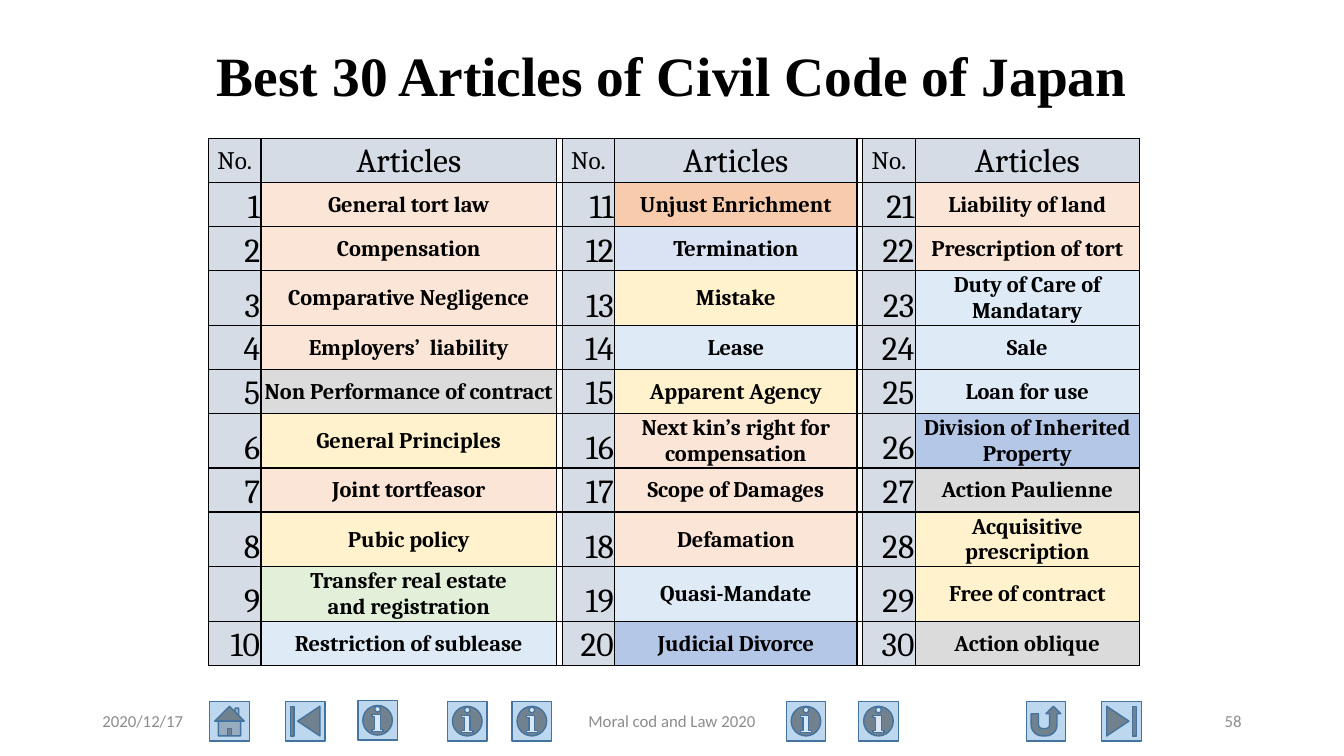
from copy import deepcopy
from lxml.etree import SubElement
from pptx import Presentation
from pptx.dml.color import RGBColor
from pptx.enum.shapes import MSO_SHAPE
from pptx.enum.text import MSO_ANCHOR, PP_ALIGN
from pptx.oxml.ns import qn
from pptx.util import Pt

theme = {
    "color": {
        "text": "000000", "footer": "8C8C8C", "border": "000000",
        "button": "BDD7EE", "button_line": "43739E", "label": "D6DCE5",
        "tort": "FBE5D6", "enrichment": "F8CBAD", "termination": "DAE3F3",
        "general": "FFF2CC", "contract": "DEEBF7", "obligation": "DBDBDB",
        "property": "E2F0D9", "family": "B4C7E7",
    },
    "font": {
        "title": {"name": "Times New Roman", "size": Pt(39.6), "bold": True},
        "footer": {"name": "Calibri", "size": Pt(12), "bold": False},
        "no": {"name": "Cambria", "size": Pt(18), "bold": False},
        "large": {"name": "Cambria", "size": Pt(24), "bold": False},
        "article": {"name": "Cambria", "size": Pt(16), "bold": True},
    },
}

ARTICLES = [
    ("General tort law", "tort"),
    ("Compensation", "tort"),
    ("Comparative Negligence", "tort"),
    ("Employers’  liability", "tort"),
    ("Non Performance of contract", "obligation"),
    ("General Principles", "general"),
    ("Joint tortfeasor", "tort"),
    ("Pubic policy", "general"),
    ("Transfer real estate\nand registration", "property"),
    ("Restriction of sublease", "contract"),
    ("Unjust Enrichment", "enrichment"),
    ("Termination", "termination"),
    ("Mistake", "general"),
    ("Lease", "contract"),
    ("Apparent Agency", "general"),
    ("Next kin’s right for compensation", "tort"),
    ("Scope of Damages", "tort"),
    ("Defamation", "tort"),
    ("Quasi-Mandate", "contract"),
    ("Judicial Divorce", "family"),
    ("Liability of land", "tort"),
    ("Prescription of tort", "tort"),
    ("Duty of Care of Mandatary", "contract"),
    ("Sale", "contract"),
    ("Loan for use", "contract"),
    ("Division of Inherited Property", "family"),
    ("Action Paulienne", "obligation"),
    ("Acquisitive prescription", "general"),
    ("Free of contract", "general"),
    ("Action oblique", "obligation"),
]
ROWS_PER_BLOCK = 10
COL_WIDTHS = [37.5, 211, 3.9, 37.5, 173, 3.9, 37.5, 160]
ROW_HEIGHT = 31.4


def rgb(key):
    return RGBColor.from_string(theme["color"][key])


def write(tf, text, font, align, color="text"):
    p = tf.paragraphs[0]
    p.text = text
    p.alignment = align
    for r in p.runs:
        for name, value in theme["font"][font].items():
            setattr(r.font, name, value)
        r.font.color.rgb = rgb(color)
    for br in p._p.findall(qn("a:br")):
        br.append(deepcopy(p.runs[0]._r.rPr))
    return p


prs = Presentation()
prs.slide_width, prs.slide_height = Pt(960), Pt(540)
s = prs.slides.add_slide(prs.slide_layouts[6])

BUTTONS = [
    ("HOME", 149.8, 501), ("BEGINNING", 203.8, 501),
    ("RETURN", 733, 501), ("END", 787, 501),
    ("INFORMATION", 319.7, 501), ("INFORMATION", 561.6, 501),
    ("INFORMATION", 613.4, 501), ("INFORMATION", 365.8, 501),
    ("INFORMATION", 255.6, 500.4),
]
for kind, x, y in BUTTONS:
    sp = s.shapes.add_shape(MSO_SHAPE["ACTION_BUTTON_" + kind], Pt(x), Pt(y), Pt(28.2), Pt(28.2))
    sp.shadow.inherit = False
    sp.fill.solid()
    sp.fill.fore_color.rgb = rgb("button")
    sp.line.color.rgb = rgb("button_line")
    sp.line.width = Pt(1)

TEXTS = [
    ("Best 30 Articles of Civil Code of Japan", 66, 28.8, 828, 54, "title", PP_ALIGN.CENTER, "text"),
    ("2020/12/17", 66, 500.5, 216, 28.75, "footer", PP_ALIGN.LEFT, "footer"),
    ("Moral cod and Law 2020", 318, 500.5, 324, 28.75, "footer", PP_ALIGN.CENTER, "footer"),
    ("58", 678, 500.5, 216, 28.75, "footer", PP_ALIGN.RIGHT, "footer"),
]
for text, x, y, w, h, font, align, color in TEXTS:
    tf = s.shapes.add_textbox(Pt(x), Pt(y), Pt(w), Pt(h)).text_frame
    tf.word_wrap = True
    tf.vertical_anchor = MSO_ANCHOR.MIDDLE
    p = write(tf, text, font, align, color)
    if font == "title":
        p.line_spacing = 0.9

tbl = s.shapes.add_table(
    ROWS_PER_BLOCK + 1, len(COL_WIDTHS), Pt(149), Pt(99.2),
    Pt(sum(COL_WIDTHS)), Pt(ROW_HEIGHT * (ROWS_PER_BLOCK + 1)),
).table
tbl.first_row = tbl.horz_banding = False
for col, width in zip(tbl.columns, COL_WIDTHS):
    col.width = Pt(width)
for row in tbl.rows:
    row.height = Pt(ROW_HEIGHT)

margins = {"margin_left": Pt(0.7), "margin_right": Pt(0.7), "margin_top": Pt(0.7), "margin_bottom": 0}
for i, row in enumerate(tbl.rows):
    for j, cell in enumerate(row.cells):
        for name, value in margins.items():
            setattr(cell, name, value)
        for side in ("lnL", "lnR", "lnT", "lnB"):
            ln = SubElement(cell._tc.get_or_add_tcPr(), qn("a:" + side), w=str(Pt(1)))
            fill = SubElement(ln, qn("a:solidFill"))
            SubElement(fill, qn("a:srgbClr"), val=theme["color"]["border"])
        block, part = divmod(j, 3)
        if part == 2:
            cell.fill.background()
            continue
        n = block * ROWS_PER_BLOCK + i
        anchor, align, fill_key = MSO_ANCHOR.MIDDLE, PP_ALIGN.CENTER, "label"
        if i == 0:
            text, font = [("No.", "no"), ("Articles", "large")][part]
        elif part == 0:
            text, font = str(n), "large"
            anchor, align = MSO_ANCHOR.BOTTOM, PP_ALIGN.RIGHT
        else:
            text, fill_key = ARTICLES[n - 1]
            font = "article"
        cell.fill.solid()
        cell.fill.fore_color.rgb = rgb(fill_key)
        cell.vertical_anchor = anchor
        write(cell.text_frame, text, font, align)

prs.save("out.pptx")
